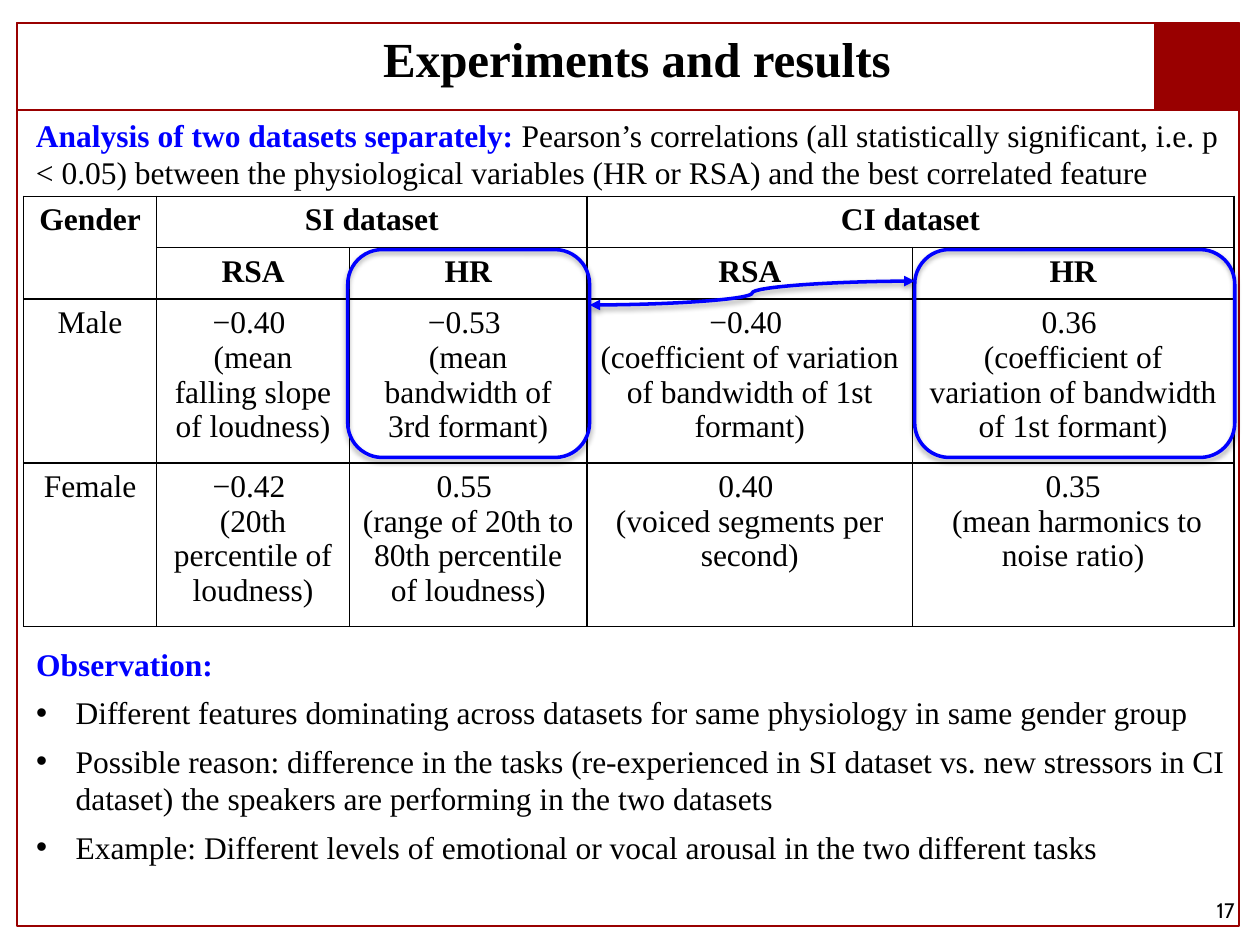
from lxml import etree
from pptx import Presentation
from pptx.dml.color import RGBColor
from pptx.enum.shapes import MSO_CONNECTOR, MSO_SHAPE
from pptx.enum.text import MSO_ANCHOR, MSO_AUTO_SIZE, PP_ALIGN
from pptx.oxml.ns import qn
from pptx.util import Pt

CENTER, LEFT, RIGHT = PP_ALIGN.CENTER, PP_ALIGN.LEFT, PP_ALIGN.RIGHT
TOP, MIDDLE = MSO_ANCHOR.TOP, MSO_ANCHOR.MIDDLE
RECTANGLE, ROUNDED = MSO_SHAPE.RECTANGLE, MSO_SHAPE.ROUNDED_RECTANGLE
CURVE = MSO_CONNECTOR.CURVE
NO_FIT = MSO_AUTO_SIZE.NONE

COLORS = {"red": "990000", "blue": "0000FF", "black": "000000"}
SERIF, SANS = "Times New Roman", "Cabin"

COLUMN_WIDTHS = [76, 110.2, 135.8, 186, 183.6]
ROW_HEIGHTS = [29.3, 29.3, 93.7, 93.7]
MERGES = [((0, 0), (1, 0)), ((0, 1), (0, 2)), ((0, 3), (0, 4))]
RESULTS = [
    [["Gender"], ["SI dataset"], None, ["CI dataset"], None],
    [None, ["RSA"], ["HR"], ["RSA"], ["HR"]],
    [["Male"],
     ["−0.40 ", "(mean falling slope of loudness)"],
     ["−0.53 ", "(mean bandwidth of 3rd formant)"],
     ["−0.40 ", "(coefficient of variation of bandwidth of 1st formant)"],
     ["0.36 ", "(coefficient of variation of bandwidth of 1st formant)"]],
    [["Female"],
     ["−0.42 ", "(20th percentile of loudness)"],
     ["0.55 ", "(range of 20th to 80th percentile of loudness)"],
     ["0.40 ", "(voiced segments per second)"],
     ["0.35", " (mean harmonics to noise ratio)"]],
]
OBSERVATIONS = [
    "Different features dominating across datasets for same physiology in same gender group",
    "Possible reason: difference in the tasks (re-experienced in SI dataset vs. "
    "new stressors in CI dataset) the speakers are performing in the two datasets",
    "Example: Different levels of emotional or vocal arousal in the two different tasks",
]


def color(name):
    """Look up a named colour."""
    return RGBColor.from_string(COLORS[name])


def add_span(para, text, size=18, font=SERIF, ink="black", bold=False):
    """Append formatted text to a paragraph."""
    span = para.add_run()
    span.text = text
    span.font.size, span.font.name, span.font.bold = Pt(size), font, bold
    span.font.color.rgb = color(ink)


def next_para(frame, index, align=LEFT, after=0):
    """Return the paragraph at an index, adding it when it is new."""
    para = frame.add_paragraph() if index else frame.paragraphs[0]
    para.alignment, para.line_spacing = align, 1.0
    para.space_before, para.space_after = Pt(0), Pt(after)
    return para


def place(shape, box):
    """Move a shape to a box given in points."""
    shape.left, shape.top, shape.width, shape.height = map(Pt, box)


def prepare_frame(shape, anchor=TOP, inset=None):
    """Set wrapping, anchor and insets, and return the text frame."""
    frame = shape.text_frame
    frame.word_wrap, frame.auto_size, frame.vertical_anchor = True, NO_FIT, anchor
    if inset is not None:
        frame.margin_left = frame.margin_right = Pt(inset)
        frame.margin_top = frame.margin_bottom = Pt(inset)
    return frame


def set_bullet(para, char=None, indent=0):
    """Give a paragraph a hanging bullet, or none."""
    props = para._p.get_or_add_pPr()
    props.set("marL", str(Pt(indent)))
    props.set("indent", str(-Pt(indent)))
    if char:
        etree.SubElement(props, qn("a:buFont"), typeface="Arial")
        etree.SubElement(props, qn("a:buChar"), char=char)
    else:
        etree.SubElement(props, qn("a:buNone"))


def add_outline(page, kind, box, ink, width, fill=None):
    """Add an outlined shape with an optional fill."""
    shape = page.shapes.add_shape(kind, *map(Pt, box))
    shape.shadow.inherit = False
    shape.line.color.rgb, shape.line.width = color(ink), Pt(width)
    if fill:
        shape.fill.solid()
        shape.fill.fore_color.rgb = color(fill)
    else:
        shape.fill.background()
    return shape


def add_soft_shadow(shape):
    """Put a faint shadow just below a shape or connector."""
    props = shape._element.spPr
    effects = props.find(qn("a:effectLst"))
    if effects is None:
        effects = etree.SubElement(props, qn("a:effectLst"))
    shadow = etree.SubElement(effects, qn("a:outerShdw"), blurRad=str(Pt(3)),
                              dist=str(Pt(1.8)), dir="5400000", rotWithShape="0")
    ink = etree.SubElement(shadow, qn("a:srgbClr"), val=COLORS["black"])
    etree.SubElement(ink, qn("a:alpha"), val="35000")


def add_page_frame(page, box, band=49.7, block=48):
    """Draw the page border, the title band and its corner block."""
    left, top, width, height = box
    add_outline(page, RECTANGLE, box, "red", 1)
    add_outline(page, RECTANGLE, (left, top, width, band), "red", 1)
    add_outline(page, RECTANGLE, (left + width - block, top, block, band), "red", 1, "red")


def add_title(page, box):
    """Fill the title placeholder."""
    title = page.shapes.title
    place(title, box)
    frame = prepare_frame(title, inset=3.6)
    add_span(next_para(frame, 0, CENTER), "Experiments and results", size=28, bold=True)


def add_page_number(page, box):
    """Write the page number."""
    frame = prepare_frame(page.shapes.add_textbox(*map(Pt, box)), MIDDLE, 3.6)
    add_span(next_para(frame, 0, RIGHT), "17", size=12, font=SANS)


def add_introduction(page, box):
    """Write the lead-in above the table."""
    frame = prepare_frame(page.shapes.add_textbox(*map(Pt, box)))
    para = next_para(frame, 0)
    add_span(para, "Analysis of two datasets separately: ", ink="blue", bold=True)
    add_span(para, "Pearson’s correlations (all statistically significant, i.e. p < 0.05) between "
                   "the physiological variables (HR or RSA) and the best correlated feature")


def add_observations(page, box):
    """Fill the body placeholder with a heading and bullets."""
    body = page.placeholders[1]
    place(body, box)
    frame = prepare_frame(body)
    heading = next_para(frame, 0, after=6)
    set_bullet(heading)
    add_span(heading, "Observation:", ink="blue", bold=True)
    for index, text in enumerate(OBSERVATIONS, 1):
        para = next_para(frame, index, after=6)
        set_bullet(para, "•", 22.5)
        add_span(para, text)


def add_borders(cell):
    """Draw a thin line on every side of a cell."""
    props = cell._tc.get_or_add_tcPr()
    for position, side in enumerate(("a:lnL", "a:lnR", "a:lnT", "a:lnB")):
        line = etree.Element(qn(side), w=str(Pt(1)))
        fill = etree.SubElement(line, qn("a:solidFill"))
        etree.SubElement(fill, qn("a:srgbClr"), val=COLORS["black"])
        props.insert(position, line)


def add_results(page, box):
    """Build the table of correlations."""
    table = page.shapes.add_table(len(RESULTS), len(RESULTS[0]), *map(Pt, box)).table
    table.first_row = table.horz_banding = False
    for column, width in zip(table.columns, COLUMN_WIDTHS):
        column.width = Pt(width)
    for row, height in zip(table.rows, ROW_HEIGHTS):
        row.height = Pt(height)
    for first, last in MERGES:
        table.cell(*first).merge(table.cell(*last))
    for row, entries in enumerate(RESULTS):
        for column, lines in enumerate(entries):
            cell = table.cell(row, column)
            cell.fill.background()
            add_borders(cell)
            for index, text in enumerate(lines or []):
                para = next_para(cell.text_frame, index, CENTER)
                add_span(para, text, bold=row < 2)


def add_comparison(page, box, widths=(138.2, 182.9)):
    """Ring the two HR columns and link them with a curved arrow."""
    left, top, width, height = box
    right_ring = left + width - widths[1]
    for ring_left, ring_width in zip((left, right_ring), widths):
        ring = add_outline(page, ROUNDED, (ring_left, top, ring_width, height), "blue", 2)
        add_soft_shadow(ring)
    ends = (left + widths[0], top + 31.7, right_ring, top + 18)
    arrow = page.shapes.add_connector(CURVE, *map(Pt, ends))
    arrow.line.color.rgb, arrow.line.width = color("blue"), Pt(2)
    for end in ("a:headEnd", "a:tailEnd"):
        etree.SubElement(arrow.line._get_or_add_ln(), qn(end), type="triangle")
    add_soft_shadow(arrow)


def main():
    """Build and save the deck."""
    deck = Presentation()
    deck.slide_width, deck.slide_height = Pt(720), Pt(540)
    page = deck.slides.add_slide(deck.slide_layouts[1])
    add_page_frame(page, (9.8, 13, 698.2, 516))
    add_title(page, (166.3, 12.6, 395.3, 49.7))
    add_page_number(page, (541.4, 505.8, 167.8, 28.8))
    add_introduction(page, (13.5, 62.6, 695, 50))
    add_observations(page, (13.5, 365, 695, 138))
    add_results(page, (13.5, 112.2, sum(COLUMN_WIDTHS), sum(ROW_HEIGHTS)))
    add_comparison(page, (198.7, 142.6, 506.9, 118.8))
    deck.save("out.pptx")


if __name__ == "__main__":
    main()
